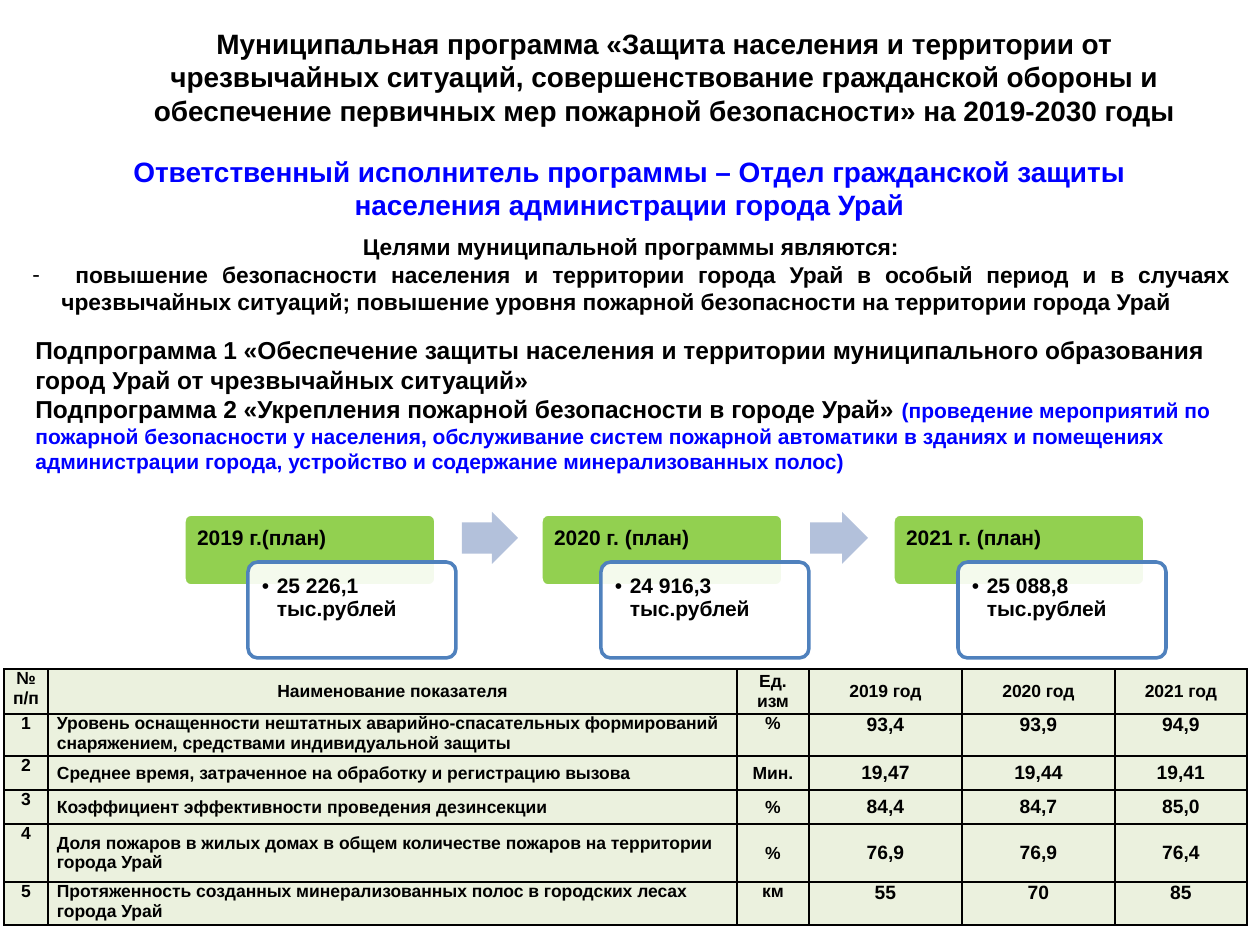
from lxml import etree
from pptx import Presentation
from pptx import util as u
from pptx.dml.color import RGBColor
from pptx.enum import shapes, text
from pptx.oxml import ns

PX = 914400 / 126
FONT = "Arial"
BLACK = RGBColor(0x00, 0x00, 0x00)
WHITE = RGBColor(0xFF, 0xFF, 0xFF)
BLUE = RGBColor(0x00, 0x00, 0xFF)
GREEN = RGBColor(0x92, 0xD0, 0x50)
EDGE = RGBColor(0x4F, 0x81, 0xBD)
ARROW = RGBColor(0xB3, 0xC1, 0xDB)
CELL = RGBColor(0xEB, 0xF1, 0xDE)
LEFT, CENTER, FULL = (text.PP_ALIGN.LEFT, text.PP_ALIGN.CENTER,
                      text.PP_ALIGN.JUSTIFY)
TOP, MIDDLE = text.MSO_ANCHOR.TOP, text.MSO_ANCHOR.MIDDLE
GOAL = ("повышение безопасности населения и территории города Урай в особый "
        "период и в случаях чрезвычайных ситуаций; повышение уровня пожарной "
        "безопасности на территории города Урай")
WORKS = ("(проведение мероприятий по пожарной безопасности у населения, "
         "обслуживание систем пожарной автоматики в зданиях и помещениях "
         "администрации города, устройство и содержание минерализованных полос)")
CARDS = [
    (184, 252, 248, "2019 г.(план)", "25 226,1 тыс.рублей"),
    (541, 242, 601, "2020 г. (план)", "24 916,3 тыс.рублей"),
    (893, 252, 958, "2021 г. (план)", "25 088,8 тыс.рублей"),
]
ARROWS = [(462, 56), (810, 58)]
COLS = [44, 689, 72, 153, 153, 132]
ROWS = [45, 42, 34, 34, 58, 43]
TABLE = [
    ["№ п/п", "Наименование показателя", "Ед.\nизм",
     "2019 год", "2020 год", "2021 год"],
    ["1", "Уровень оснащенности нештатных аварийно-спасательных формирований "
     "снаряжением, средствами индивидуальной защиты",
     "%", "93,4", "93,9", "94,9"],
    ["2", "Среднее время, затраченное на обработку и регистрацию вызова",
     "Мин.", "19,47", "19,44", "19,41"],
    ["3", "Коэффициент эффективности проведения дезинсекции",
     "%", "84,4", "84,7", "85,0"],
    ["4", "Доля пожаров в жилых домах в общем количестве пожаров "
     "на территории города Урай", "%", "76,9", "76,9", "76,4"],
    ["5", "Протяженность созданных минерализованных полос в городских лесах "
     "города Урай", "км", "55", "70", "85"],
]


def px(*vals):
    return [u.Emu(round(val * PX)) for val in vals]


def add_run(par, words, size, color):
    run = par.add_run()
    run.text = words
    font = run.font
    font.name, font.size, font.bold = FONT, u.Pt(size), True
    font.color.rgb = color


def write(frame, words, size=12, color=BLACK, align=LEFT, first=True,
          space=None, bullet=None, hang=0):
    for num, line in enumerate(words.split("\n")):
        par = frame.paragraphs[0] if first and num == 0 else frame.add_paragraph()
        par.alignment = align
        par.line_spacing = space
        if bullet:
            props = par._p.get_or_add_pPr()
            left = px(hang)[0]
            props.set("marL", str(left))
            props.set("indent", str(-left))
            face = etree.SubElement(props, ns.qn("a:buFont"))
            face.set("typeface", FONT)
            mark = etree.SubElement(props, ns.qn("a:buChar"))
            mark.set("char", bullet)
        add_run(par, line, size, color)
    return par


def add_box(slide, *place):
    frame = slide.shapes.add_textbox(*px(*place)).text_frame
    frame.word_wrap = True
    return frame


def add_form(slide, kind, place, fill, line=None, adjust=(0.1,)):
    form = slide.shapes.add_shape(kind, *px(*place))
    form.shadow.inherit = False
    form.fill.solid()
    form.fill.fore_color.rgb = fill
    if line:
        form.line.color.rgb = line
        form.line.width = u.Pt(2)
    else:
        form.line.fill.background()
    for num, val in enumerate(adjust):
        form.adjustments[num] = val
    return form


def add_label(form, words, **style):
    frame = form.text_frame
    frame.word_wrap = True
    frame.vertical_anchor = TOP
    frame.margin_left = frame.margin_right = frame.margin_top = px(11)[0]
    write(frame, words, space=0.9, **style)


def add_card(slide, left, width, inner, year, sum_):
    kind = shapes.MSO_SHAPE.ROUNDED_RECTANGLE
    head = add_form(slide, kind, (left, 514, width, 72), GREEN, WHITE)
    add_label(head, year)
    body = add_form(slide, kind, (inner, 562, 208, 96), WHITE, EDGE)
    tint = body.fill._xPr.find(ns.qn("a:solidFill"))[0]
    etree.SubElement(tint, ns.qn("a:alpha")).set("val", "90000")
    add_label(body, sum_, bullet="•", hang=15)


def add_edges(cell):
    props = cell._tc.get_or_add_tcPr()
    for side in "LRTB":
        line = etree.SubElement(props, ns.qn("a:ln" + side))
        line.set("w", str(u.Pt(1)))
        fill = etree.SubElement(line, ns.qn("a:solidFill"))
        etree.SubElement(fill, ns.qn("a:srgbClr")).set("val", str(BLACK))


def fill_cell(cell, words, row, col):
    add_edges(cell)
    cell.fill.solid()
    cell.fill.fore_color.rgb = CELL
    cell.margin_left = cell.margin_right = px(4 if row == 0 or col == 0 else 9)[0]
    cell.margin_top = cell.margin_bottom = 0
    cell.vertical_anchor = TOP if col == 0 or row in (1, 5) else MIDDLE
    write(cell.text_frame, words, size=11 if row and col > 2 else 10,
          align=LEFT if row and col == 1 else CENTER)


def add_grid(slide):
    grid = slide.shapes.add_table(
        len(ROWS), len(COLS), *px(4, 669, sum(COLS), sum(ROWS))).table
    grid.first_row = grid.horz_banding = False
    for col, width in zip(grid.columns, px(*COLS)):
        col.width = width
    for row, height in zip(grid.rows, px(*ROWS)):
        row.height = height
    for row, line in enumerate(TABLE):
        for col, words in enumerate(line):
            fill_cell(grid.cell(row, col), words, row, col)


def add_intro(slide):
    write(add_box(slide, 108, 20, 1113, 115),
          "Муниципальная программа «Защита населения и территории от "
          "чрезвычайных ситуаций, совершенствование гражданской обороны и "
          "обеспечение первичных мер пожарной безопасности» на 2019-2030 годы",
          size=16, align=CENTER)
    write(add_box(slide, 69, 148, 1121, 81),
          "Ответственный исполнитель программы – Отдел гражданской защиты "
          "населения администрации города Урай",
          size=16, color=BLUE, align=CENTER)
    goals = add_box(slide, 20, 227, 1221, 96)
    write(goals, "Целями муниципальной программы являются:", size=13, align=CENTER)
    write(goals, " " + GOAL, size=13, align=FULL, first=False, bullet="-", hang=29)
    parts = add_box(slide, 23, 329, 1222, 152)
    last = write(parts, "Подпрограмма 1 «Обеспечение защиты населения и территории "
                 "муниципального образования город Урай от чрезвычайных ситуаций»\n"
                 "Подпрограмма 2 «Укрепления пожарной безопасности в городе Урай» ",
                 size=14)
    add_run(last, WORKS, 12, BLUE)


def main():
    deck = Presentation()
    deck.slide_width, deck.slide_height = px(1260, 945)
    slide = deck.slides.add_slide(deck.slide_layouts[6])
    add_intro(slide)
    for card in CARDS:
        add_card(slide, *card)
    for left, width in ARROWS:
        add_form(slide, shapes.MSO_SHAPE.RIGHT_ARROW, (left, 512, width, 52),
                 ARROW, adjust=(0.6, 0.5))
    add_grid(slide)
    deck.save("out.pptx")


if __name__ == "__main__":
    main()
